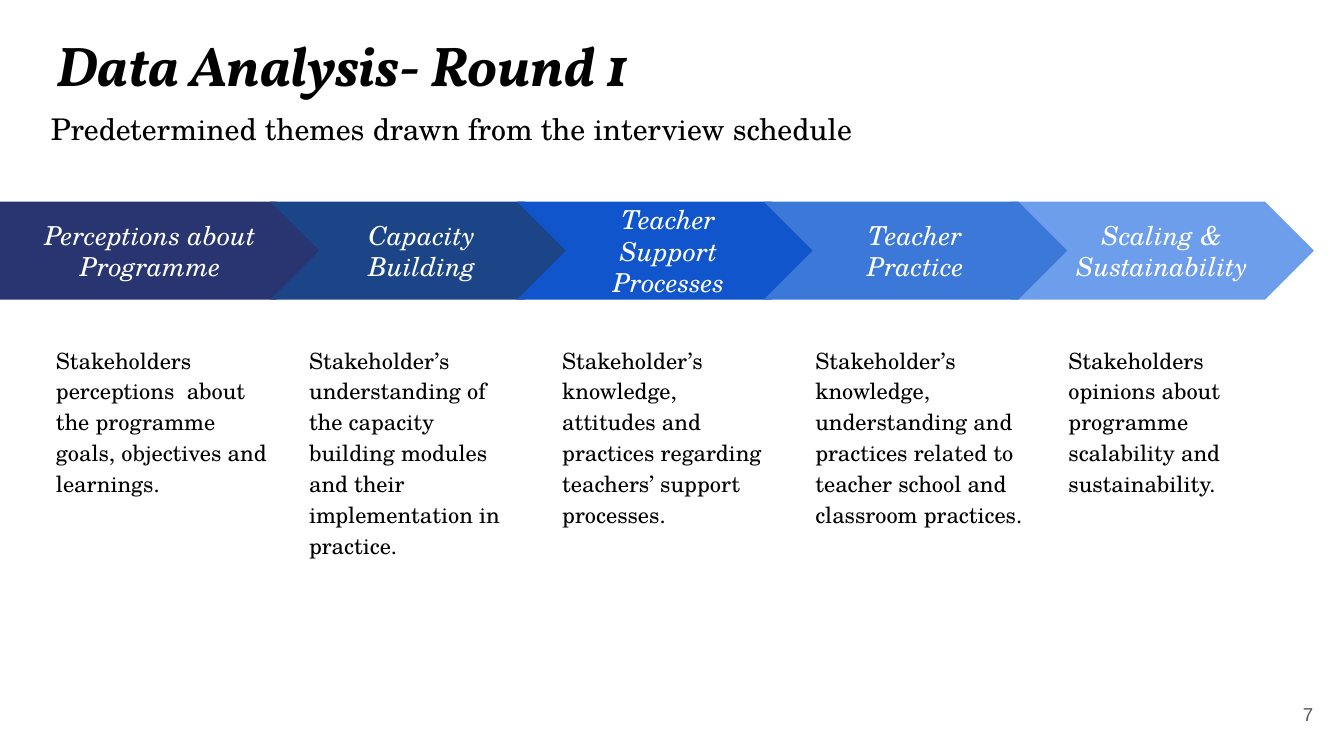
from pptx import Presentation
from pptx.dml.color import RGBColor
from pptx.enum import shapes, text
from pptx.util import Pt

INK = {
    "black": "000000", "white": "FFFFFF", "grey": "595959",
    "navy": "283570", "deep": "1C4587", "blue": "1155CC",
    "mid": "3C78D8", "light": "6D9EEB",
}
SERIF = "TeX Gyre Schola"
STEPS = [
    ("Perceptions about Programme", "navy",
     "Stakeholders perceptions  about the programme goals, objectives and learnings."),
    ("Capacity Building", "deep",
     "Stakeholder’s understanding of the capacity building modules and their implementation in practice."),
    ("Teacher Support Processes", "blue",
     "Stakeholder’s knowledge, attitudes and practices regarding teachers’ support processes."),
    ("Teacher Practice", "mid",
     "Stakeholder’s knowledge, understanding and practices related to teacher school and classroom practices."),
    ("Scaling & Sustainability", "light",
     "Stakeholders opinions about programme scalability and sustainability."),
]
STACK = (0, 1, 2, 4, 3)


def write(shape, words, size, font=SERIF, color="black", bold=False,
          italic=False, align="LEFT", anchor="TOP", space=None):
    frame = shape.text_frame
    frame.word_wrap = True
    frame.vertical_anchor = getattr(text.MSO_ANCHOR, anchor)
    frame.margin_left = frame.margin_right = Pt(7.2)
    frame.margin_top = frame.margin_bottom = Pt(7.2)
    para = frame.paragraphs[0]
    para.alignment = getattr(text.PP_ALIGN, align)
    if space:
        para.line_spacing = space
    run = para.add_run()
    run.text = words
    run.font.size = Pt(size)
    run.font.name = font
    run.font.bold = bold
    run.font.italic = italic
    run.font.color.rgb = RGBColor.from_string(INK[color])


def label(slide, box, words, size, **style):
    write(slide.shapes.add_textbox(*map(Pt, box)), words, size, **style)


def arrow(slide, box, kind, words, color):
    shape = slide.shapes.add_shape(kind, *map(Pt, box))
    shape.adjustments[0] = 0.5
    shape.shadow.inherit = False
    shape.fill.solid()
    shape.fill.fore_color.rgb = RGBColor.from_string(INK[color])
    shape.line.fill.background()
    write(shape, words, 14, color="white", italic=True,
          align="CENTER", anchor="MIDDLE")


def header(slide, left, top, width):
    label(slide, (left + 2.9, top, width, 45.4), "Data Analysis- Round 1", 30,
          font="Vollkorn", bold=True, italic=True)
    label(slide, (left, top + 42.5, width, 31),
          "Predetermined themes drawn from the interview schedule", 16)


def banner(slide, left, top, height):
    kinds = shapes.MSO_SHAPE
    for i in STACK:
        words, color, _ = STEPS[i]
        if i == 0:
            box, kind = (left, top, 174.2, height), kinds.PENTAGON
        else:
            x = left + 144.7 + 132.2 * (i - 1)
            box, kind = (x, top, 162.7, height), kinds.CHEVRON
        arrow(slide, box, kind, words, color)


def notes(slide, left, top, height):
    for i, (_, _, words) in enumerate(STEPS):
        label(slide, (left + 135.6 * i, top, 128.2, height), words, 12, space=1.15)


def footer(slide, left, top, width, height):
    label(slide, (left, top, width, height), "7", 10, font="Arial",
          color="grey", align="RIGHT", anchor="MIDDLE")


def main():
    deck = Presentation()
    deck.slide_width, deck.slide_height = Pt(720), Pt(405)
    slide = deck.slides.add_slide(deck.slide_layouts[6])
    header(slide, 20.2, 9.4, 671)
    banner(slide, 0, 108, 52.6)
    notes(slide, 22.9, 176.4, 120.2)
    footer(slide, 667.4, 367.2, 43.2, 31)
    deck.save("out.pptx")


if __name__ == "__main__":
    main()
